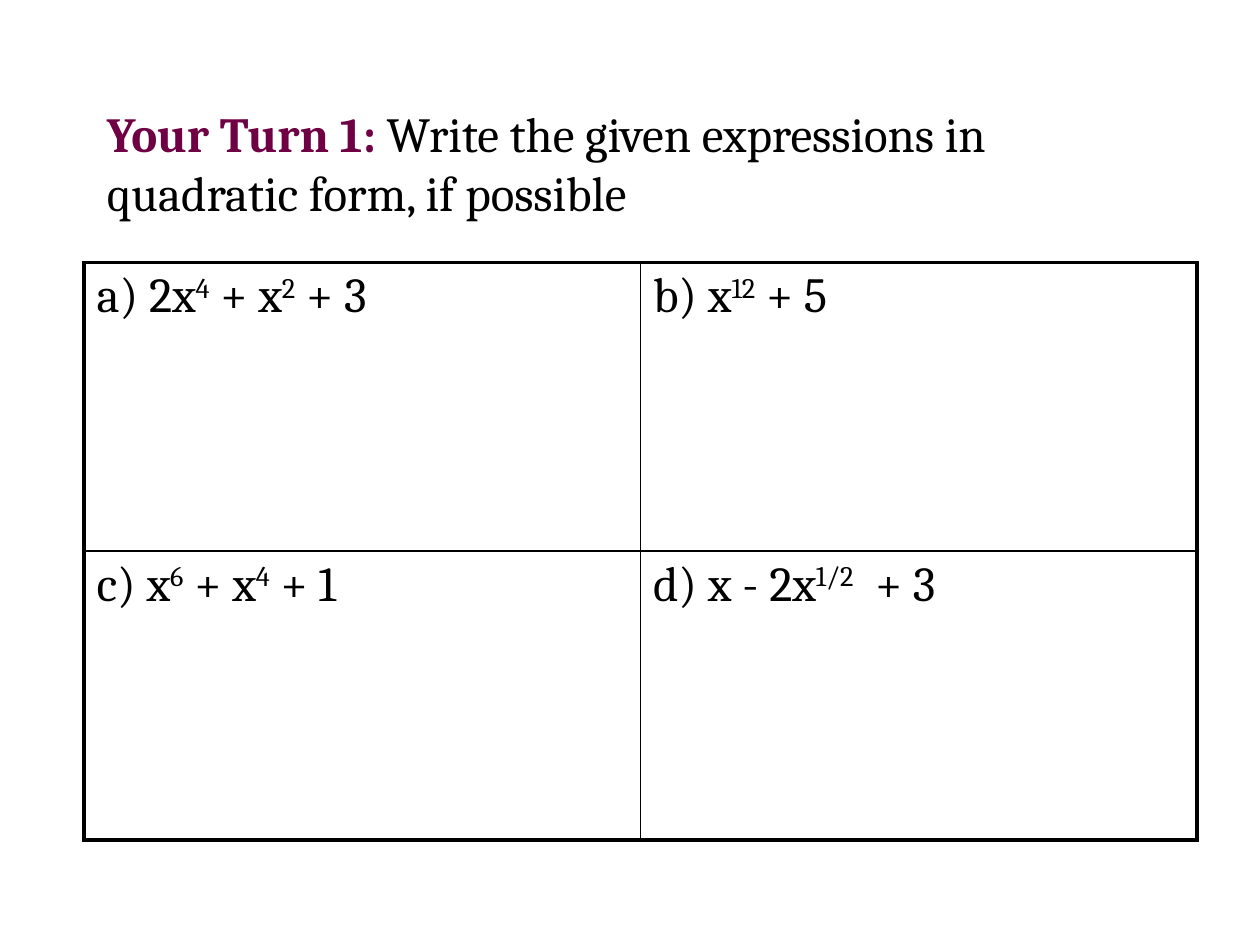
from lxml import etree
from pptx import Presentation
from pptx import util as u
from pptx.dml.color import RGBColor
from pptx.enum import text
from pptx.oxml import ns

PX = 9525
FONT = "Cambria"
FONT_SIZE = 28
BLACK = RGBColor(0x00, 0x00, 0x00)
PLUM = RGBColor(0x6E, 0x00, 0x43)
OUTER_LINE = 2.25
INNER_LINE = 1

EXPRESSIONS = [
    [
        [("a) 2x", False), ("4", True), (" + x", False), ("2", True), (" + 3", False)],
        [("b) x", False), ("12", True), (" + 5", False)],
    ],
    [
        [("c) x", False), ("6", True), (" + x", False), ("4", True), (" + 1", False)],
        [("d) x - 2x", False), ("1/2", True), ("  + 3", False)],
    ],
]


def px(*lengths):
    """Turn pixel lengths into EMU."""
    return [u.Emu(length * PX) for length in lengths]


def add_run(paragraph, wording, color=BLACK, bold=False, raised=False):
    """Add one styled run, raised when it is an exponent."""
    run = paragraph.add_run()
    run.text = wording
    run.font.name = FONT
    run.font.size = u.Pt(FONT_SIZE)
    run.font.bold = bold
    run.font.color.rgb = color
    if raised:
        run.font._element.set("baseline", "30000")


def set_border(cell, side, width):
    """Draw one solid black border of a cell."""
    properties = cell._tc.get_or_add_tcPr()
    line = etree.SubElement(properties, ns.qn(f"a:ln{side}"), w=str(u.Pt(width)))
    fill = etree.SubElement(line, ns.qn("a:solidFill"))
    etree.SubElement(fill, ns.qn("a:srgbClr"), val=str(BLACK))


def add_instruction(slide, left, top, width, height):
    """Place the exercise heading in the given box."""
    frame = slide.shapes.add_textbox(*px(left, top, width, height)).text_frame
    frame.word_wrap = True
    frame.vertical_anchor = text.MSO_ANCHOR.MIDDLE
    paragraph = frame.paragraphs[0]
    add_run(paragraph, "Your Turn 1:", PLUM, bold=True)
    add_run(paragraph, " Write the given expressions in quadratic form, if possible")


def add_expression_grid(slide, left, top, width, height):
    """Place the table of expressions, with a heavy frame, in the given box."""
    rows, columns = len(EXPRESSIONS), len(EXPRESSIONS[0])
    box = px(left, top, width, height)
    table = slide.shapes.add_table(rows, columns, *box).table
    table.first_row = False
    table.horz_banding = False
    for row, expressions in enumerate(EXPRESSIONS):
        for column, parts in enumerate(expressions):
            cell = table.cell(row, column)
            outer_sides = {
                "L": column == 0,
                "R": column == columns - 1,
                "T": row == 0,
                "B": row == rows - 1,
            }
            for side, is_outer in outer_sides.items():
                set_border(cell, side, OUTER_LINE if is_outer else INNER_LINE)
            cell.fill.background()
            for wording, raised in parts:
                add_run(cell.text_frame.paragraphs[0], wording, raised=raised)


def main():
    """Build the exercise slide and save it."""
    presentation = Presentation()
    presentation.slide_width, presentation.slide_height = px(960, 720)
    slide = presentation.slides.add_slide(presentation.slide_layouts[6])
    add_instruction(slide, 72, 64, 816, 120)
    add_expression_grid(slide, 64, 200, 848, 440)
    presentation.save("out.pptx")


if __name__ == "__main__":
    main()
